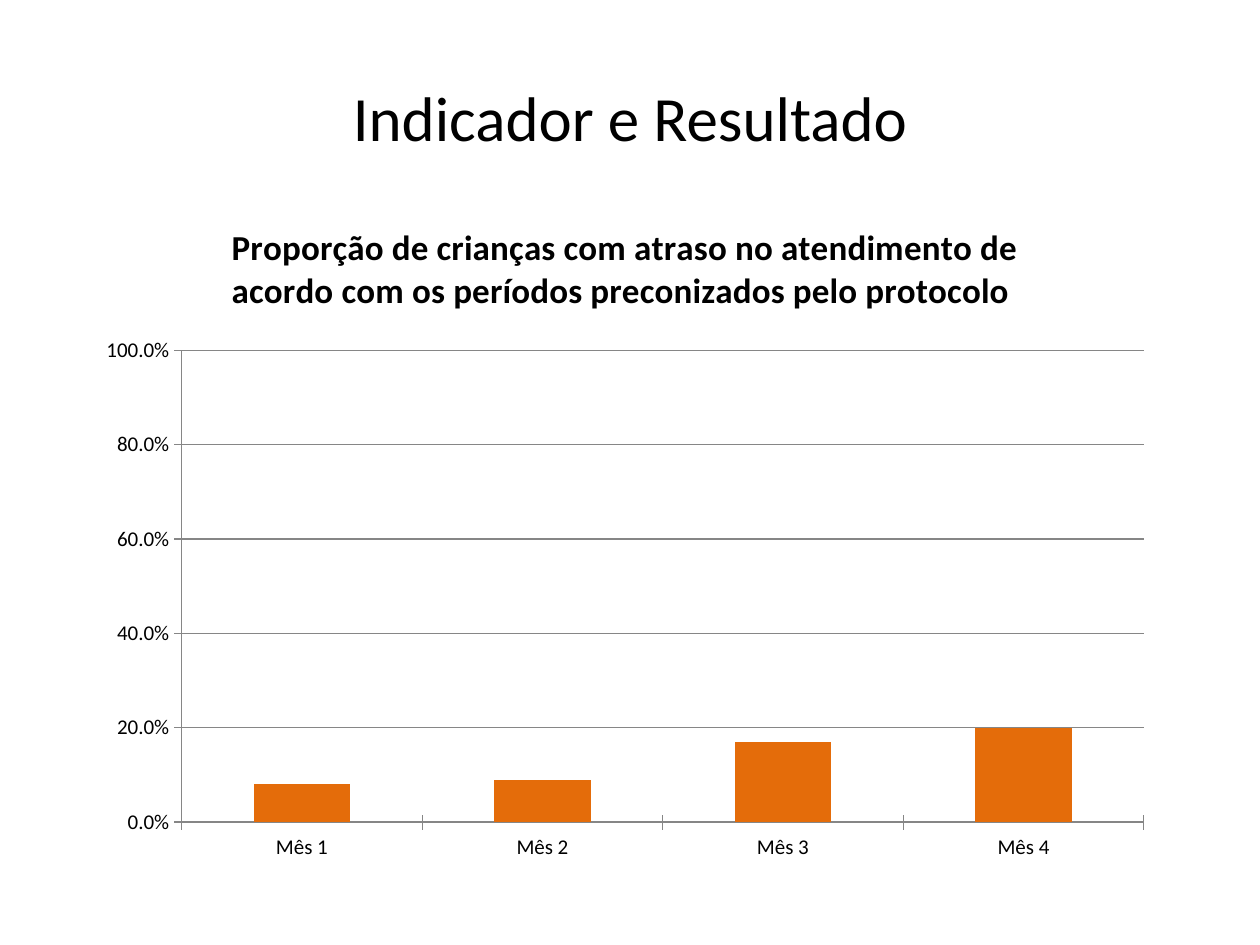
from dataclasses import dataclass

from lxml import etree
from pptx import Presentation
from pptx.chart.data import CategoryChartData
from pptx.dml.color import RGBColor
from pptx.enum.chart import XL_CHART_TYPE, XL_TICK_MARK
from pptx.enum.text import MSO_ANCHOR, PP_ALIGN
from pptx.oxml import parse_xml
from pptx.oxml.ns import nsdecls
from pptx.util import Inches, Pt

COLUMN = XL_CHART_TYPE.COLUMN_CLUSTERED
CROSS = XL_TICK_MARK.CROSS
MIDDLE = MSO_ANCHOR.MIDDLE
CENTER = PP_ALIGN.CENTER
TITLE_ONLY = 5


@dataclass(frozen=True)
class Theme:
    font: str = "Calibri"
    text: RGBColor = RGBColor(0, 0, 0)
    bar: RGBColor = RGBColor(0xE4, 0x6C, 0x0A)
    grid: RGBColor = RGBColor(0x86, 0x86, 0x86)
    title: int = 36
    chart_title: int = 20
    axis: int = 12
    chart: int = 10


@dataclass(frozen=True)
class Box:
    left: float
    top: float
    width: float
    height: float


THEME = Theme()
TITLE_BOX = Box(0.5, 0.3, 9, 1.25)
CHART_BOX = Box(0.67, 1.55, 8.58, 5.35)
PLOT_SHARE = Box(0.09, 0.23, 0.89, 0.7)

TITLE = "Indicador e Resultado"
INDICATOR = (
    "Proporção de crianças com atraso no atendimento de "
    "acordo com os períodos preconizados pelo protocolo "
)
RESULTS = {"Mês 1": 0.08, "Mês 2": 0.09, "Mês 3": 0.17, "Mês 4": 0.2}


def set_font(font, size: int, bold: bool = False) -> None:
    font.name = THEME.font
    font.size = Pt(size)
    font.bold = bold
    font.color.rgb = THEME.text


def lengths(box: Box) -> list:
    return [Inches(v) for v in (box.left, box.top, box.width, box.height)]


def add_title(slide) -> None:
    sp = slide.shapes.title
    sp.left, sp.top, sp.width, sp.height = lengths(TITLE_BOX)
    tf = sp.text_frame
    tf.vertical_anchor = MIDDLE
    p = tf.paragraphs[0]
    p.alignment = CENTER
    r = p.add_run()
    r.text = TITLE
    set_font(r.font, THEME.title)


def style_axis(axis) -> None:
    axis.major_tick_mark = CROSS
    set_font(axis.tick_labels.font, THEME.axis)
    axis.format.line.color.rgb = THEME.grid
    axis.format.line.width = Pt(0.75)


def place_plot(chart, share: Box) -> None:
    area = chart.element.chart.plotArea
    for old in area.findall("{*}layout"):
        area.remove(old)
    layout = parse_xml(f"<c:layout {nsdecls('c')}><c:manualLayout/></c:layout>")
    values = {
        "layoutTarget": "inner",
        "xMode": "edge",
        "yMode": "edge",
        "x": share.left,
        "y": share.top,
        "w": share.width,
        "h": share.height,
    }
    for name, value in values.items():
        tag = layout.tag.replace("layout", name)
        etree.SubElement(layout[0], tag).set("val", str(value))
    area.insert(0, layout)


def add_results_chart(slide) -> None:
    data = CategoryChartData(number_format="0.0%")
    data.categories = list(RESULTS)
    data.add_series(INDICATOR, list(RESULTS.values()))
    chart = slide.shapes.add_chart(COLUMN, *lengths(CHART_BOX), data).chart
    set_font(chart.font, THEME.chart)
    chart.has_legend = False
    chart.has_title = True
    tf = chart.chart_title.text_frame
    r = tf.paragraphs[0].add_run()
    r.text = INDICATOR
    set_font(r.font, THEME.chart_title, bold=True)
    chart.chart_title.include_in_layout = False

    for axis in (chart.category_axis, chart.value_axis):
        style_axis(axis)
    axis = chart.value_axis
    axis.minimum_scale, axis.maximum_scale, axis.major_unit = 0, 1, 0.2
    axis.tick_labels.number_format = "0.0%"
    axis.tick_labels.number_format_is_linked = False
    axis.has_major_gridlines = True
    line = axis.major_gridlines.format.line
    line.color.rgb = THEME.grid
    line.width = Pt(0.75)

    plot = chart.plots[0]
    plot.gap_width = 150
    plot.vary_by_categories = False
    fill = plot.series[0].format.fill
    fill.solid()
    fill.fore_color.rgb = THEME.bar
    place_plot(chart, PLOT_SHARE)


def main() -> None:
    prs = Presentation()
    prs.slide_width, prs.slide_height = Inches(10), Inches(7.5)
    slide = prs.slides.add_slide(prs.slide_layouts[TITLE_ONLY])
    add_title(slide)
    add_results_chart(slide)
    prs.save("out.pptx")


if __name__ == "__main__":
    main()
